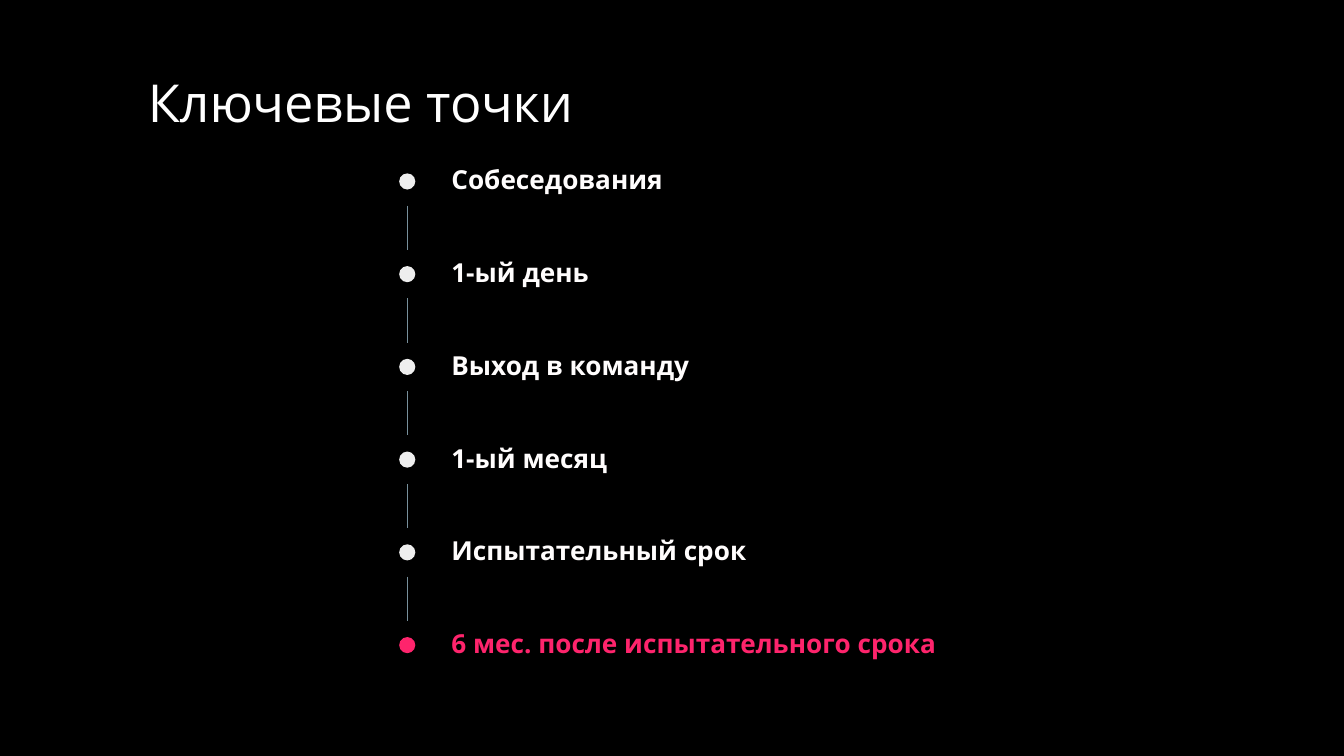
from dataclasses import dataclass

from lxml import etree
from pptx import Presentation
from pptx.dml.color import RGBColor
from pptx.enum import shapes, text
from pptx.oxml import ns
from pptx.util import Pt


@dataclass(frozen=True)
class Theme:
    font: str = "Open Sans"
    background: str = "000000"
    title: str = "FFFFFF"
    label: str = "FFFDFD"
    dot: str = "EEEEEE"
    accent: str = "FE246C"
    line: str = "78909C"
    title_size: int = 28
    label_size: int = 14
    inset: float = 7.2


THEME = Theme()
MILESTONES = [
    "Собеседования",
    "1-ый день",
    "Выход в команду",
    "1-ый месяц",
    "Испытательный срок",
    "6 мес. после испытательного срока",
]

# Timeline geometry, in points
AXIS_X = 218.16
FIRST_Y = 97.2
STEP = 49.68
DOT = 8.64
LINE_GAP = 12.96
LABEL_X, LABEL_W, LABEL_H = 231.84, 281.52, 41.04
LABEL_RISE = 21.6


def rgb(value):
    return RGBColor.from_string(value)


def write(sp, content, size, color, anchor, bold=False):
    tf = sp.text_frame
    tf.text = content
    tf.word_wrap = True
    tf.auto_size = text.MSO_AUTO_SIZE.NONE
    tf.vertical_anchor = anchor
    tf.margin_left = tf.margin_right = Pt(THEME.inset)
    tf.margin_top = tf.margin_bottom = Pt(THEME.inset)
    p = tf.paragraphs[0]
    p.alignment = text.PP_ALIGN.LEFT
    font = p.runs[0].font
    font.name, font.size, font.bold = THEME.font, Pt(size), bold
    font.color.rgb = rgb(color)


def set_title(s, content):
    sp = s.shapes.title
    sp.left, sp.top, sp.width, sp.height = Pt(72), Pt(30.24), Pt(623.52), Pt(45.36)
    write(sp, content, THEME.title_size, THEME.title, text.MSO_ANCHOR.TOP)


def add_label(s, y, content, color):
    sp = s.shapes.add_shape(
        shapes.MSO_SHAPE.ROUNDED_RECTANGLE,
        Pt(LABEL_X), Pt(y - LABEL_RISE), Pt(LABEL_W), Pt(LABEL_H),
    )
    sp.adjustments[0] = 0.24
    sp.shadow.inherit = False
    sp.fill.background()
    sp.line.fill.background()
    write(sp, content, THEME.label_size, color, text.MSO_ANCHOR.MIDDLE, bold=True)


def add_dot(s, y, color):
    sp = s.shapes.add_shape(
        shapes.MSO_SHAPE.OVAL,
        Pt(AXIS_X - DOT / 2), Pt(y - DOT / 2), Pt(DOT), Pt(DOT),
    )
    sp.shadow.inherit = False
    sp.fill.solid()
    sp.fill.fore_color.rgb = rgb(color)
    sp.line.fill.background()


def add_link(s, y):
    """Draw the line from the dot at y towards the next one."""
    line = s.shapes.add_connector(
        shapes.MSO_CONNECTOR.STRAIGHT,
        Pt(AXIS_X), Pt(y + LINE_GAP), Pt(AXIS_X), Pt(y + STEP - LINE_GAP),
    )
    line.line.color.rgb = rgb(THEME.line)
    line.line.width = Pt(0.75)
    etree.SubElement(line._element.spPr, ns.qn("a:effectLst"))


def main():
    prs = Presentation()
    prs.slide_width, prs.slide_height = Pt(720), Pt(405)
    s = prs.slides.add_slide(prs.slide_layouts[5])
    s.background.fill.solid()
    s.background.fill.fore_color.rgb = rgb(THEME.background)

    set_title(s, "Ключевые точки")

    # Timeline: the last milestone is highlighted
    last = len(MILESTONES) - 1
    for i, name in enumerate(MILESTONES):
        y = FIRST_Y + i * STEP
        add_label(s, y, name, THEME.accent if i == last else THEME.label)
        add_dot(s, y, THEME.accent if i == last else THEME.dot)
        if i < last:
            add_link(s, y)

    prs.save("out.pptx")


if __name__ == "__main__":
    main()
